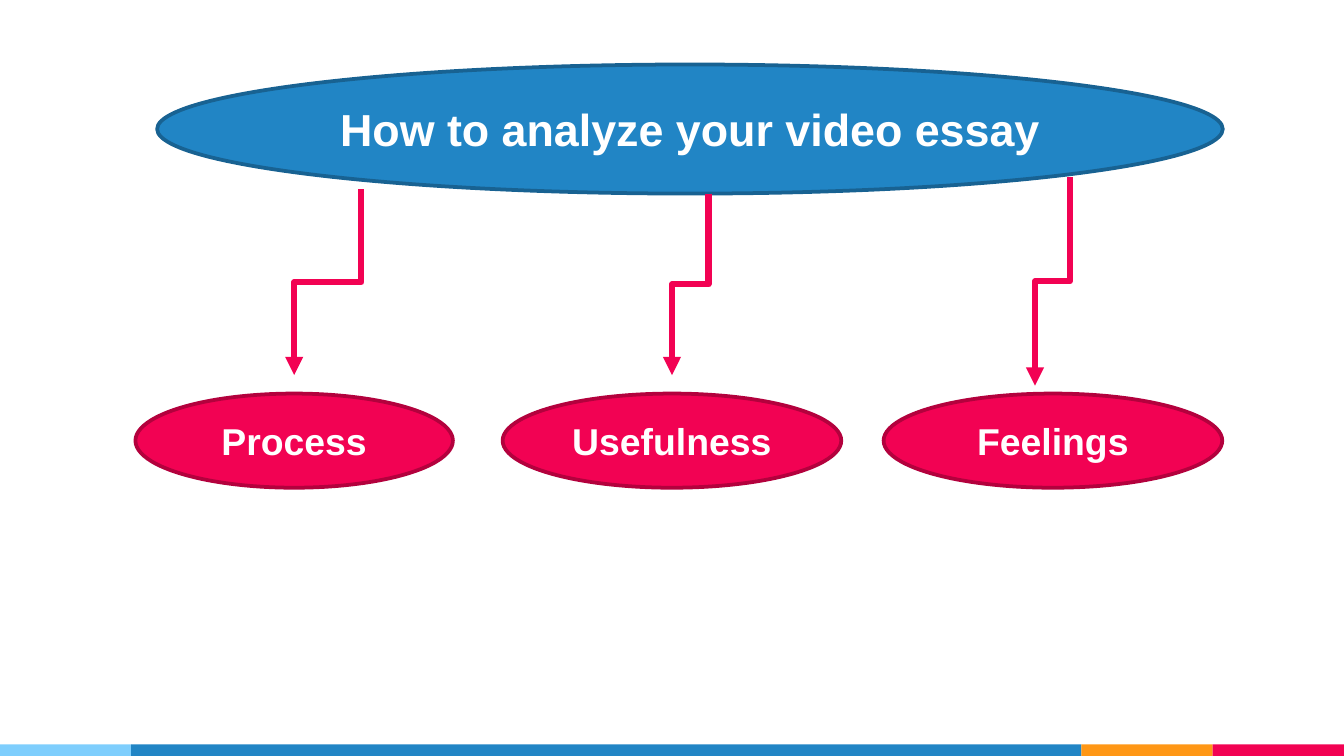
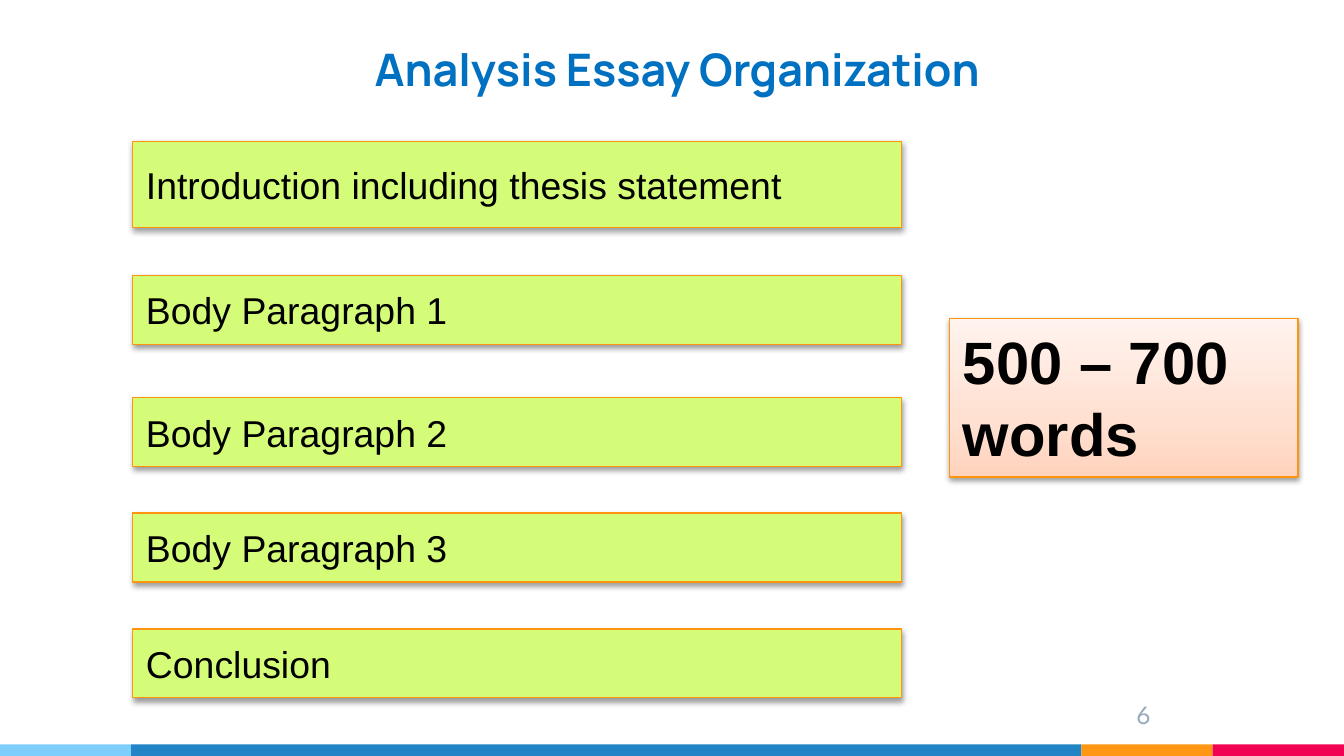
from copy import deepcopy
from dataclasses import dataclass
from itertools import pairwise
from typing import NamedTuple

from lxml.etree import SubElement
from pptx import Presentation
from pptx.dml.color import RGBColor
from pptx.enum.shapes import MSO_CONNECTOR, MSO_SHAPE
from pptx.enum.text import MSO_ANCHOR, PP_ALIGN
from pptx.oxml.ns import qn
from pptx.shapes.autoshape import Shape
from pptx.slide import Slide
from pptx.util import Cm, Pt


@dataclass(frozen=True)
class Theme:
    sky: RGBColor = RGBColor(0x7E, 0xCE, 0xFD)
    blue: RGBColor = RGBColor(0x21, 0x85, 0xC5)
    dark_blue: RGBColor = RGBColor(0x18, 0x62, 0x92)
    title_blue: RGBColor = RGBColor(0x00, 0x70, 0xC0)
    orange: RGBColor = RGBColor(0xFF, 0x97, 0x15)
    border_orange: RGBColor = RGBColor(0xFF, 0x94, 0x0F)
    pink: RGBColor = RGBColor(0xF2, 0x02, 0x53)
    dark_pink: RGBColor = RGBColor(0xB3, 0x01, 0x3D)
    lime: RGBColor = RGBColor(0xD5, 0xFC, 0x79)
    gray: RGBColor = RGBColor(0x97, 0xAB, 0xBC)
    white: RGBColor = RGBColor(0xFF, 0xFF, 0xFF)
    black: RGBColor = RGBColor(0x00, 0x00, 0x00)
    peach_stops: tuple[tuple[float, RGBColor], ...] = (
        (0, RGBColor(0xFF, 0xD3, 0xBD)),
        (0.35, RGBColor(0xFF, 0xE0, 0xD1)),
        (1, RGBColor(0xFF, 0xF3, 0xEE)),
    )
    title_size: int = 24
    body_size: int = 20
    callout_size: int = 32
    number_size: int = 13


THEME = Theme()


class Box(NamedTuple):
    """Left, top, width and height in centimetres."""
    left: float
    top: float
    width: float
    height: float

    def lengths(self) -> tuple[Cm, ...]:
        return tuple(Cm(value) for value in self)


class TextStyle(NamedTuple):
    size: int
    color: RGBColor
    font: str = "Arial"
    bold: bool = False
    align: PP_ALIGN = PP_ALIGN.LEFT
    anchor: MSO_ANCHOR = MSO_ANCHOR.MIDDLE


class Arrow(NamedTuple):
    """Start and end of a downward elbow arrow in centimetres."""
    start_x: float
    start_y: float
    end_x: float
    end_y: float


class Topic(NamedTuple):
    text: str
    box: Box
    arrow: Arrow


class Section(NamedTuple):
    text: str
    top: float
    height: float = 1.3


SLIDE_WIDTH, SLIDE_HEIGHT = 25.4, 14.29
BAND_HEIGHT = 0.22
BAND_EDGES = (0, 2.48, 20.44, 22.92, SLIDE_WIDTH)
BAND_COLORS = (THEME.sky, THEME.blue, THEME.orange, THEME.pink)

HEADING = TextStyle(THEME.title_size, THEME.white, bold=True, align=PP_ALIGN.CENTER)
TOPIC = HEADING._replace(size=THEME.body_size)
TITLE = TextStyle(THEME.title_size, THEME.title_blue, "Manrope", True,
                  anchor=MSO_ANCHOR.BOTTOM)
SECTION = TextStyle(THEME.body_size, THEME.black)
CALLOUT = TextStyle(THEME.callout_size, THEME.black, bold=True, anchor=MSO_ANCHOR.TOP)
NUMBER = TextStyle(THEME.number_size, THEME.gray, "Lato", align=PP_ALIGN.RIGHT,
                   anchor=MSO_ANCHOR.TOP)

TOPICS = (
    Topic("Process", Box(2.56, 7.44, 6, 1.78), Arrow(6.83, 3.58, 5.56, 7.09)),
    Topic("Usefulness", Box(9.5, 7.44, 6.4, 1.78), Arrow(13.39, 3.66, 12.7, 7.09)),
    Topic("Feelings", Box(16.7, 7.44, 6.4, 1.78), Arrow(20.22, 3.35, 19.56, 7.29)),
)
SECTIONS = (
    Section("Introduction including thesis statement", 2.67, 1.63),
    Section("Body Paragraph 1", 5.21),
    Section("Body Paragraph 2", 7.52),
    Section("Body Paragraph 3", 9.7),
    Section("Conclusion", 11.89),
)


def write(shape: Shape, text: str, style: TextStyle) -> None:
    frame = shape.text_frame
    frame.word_wrap = True
    frame.vertical_anchor = style.anchor
    paragraph = frame.paragraphs[0]
    paragraph.alignment = style.align
    run = paragraph.add_run()
    run.text = text
    run.font.name = style.font
    run.font.size = Pt(style.size)
    run.font.bold = style.bold
    run.font.color.rgb = style.color


def add_text(slide: Slide, box: Box, text: str, style: TextStyle) -> None:
    shape = slide.shapes.add_textbox(*box.lengths())
    frame = shape.text_frame
    frame.margin_left = frame.margin_right = Cm(0.25)
    frame.margin_top = frame.margin_bottom = Cm(0.25)
    write(shape, text, style)


def add_filled(slide: Slide, kind: MSO_SHAPE, box: Box, fill: RGBColor,
               line: RGBColor | None = None, line_width: float = 0) -> Shape:
    shape = slide.shapes.add_shape(kind, *box.lengths())
    shape.shadow.inherit = False
    shape.fill.solid()
    shape.fill.fore_color.rgb = fill
    if line is None:
        shape.line.fill.background()
    else:
        shape.line.color.rgb = line
        shape.line.width = Pt(line_width)
    return shape


def add_ellipse(slide: Slide, box: Box, text: str, style: TextStyle,
                fill: RGBColor, line: RGBColor) -> None:
    write(add_filled(slide, MSO_SHAPE.OVAL, box, fill, line, 2), text, style)


def add_card(slide: Slide, box: Box, text: str, style: TextStyle) -> Shape:
    """Add an orange-edged rectangle with a soft shadow below it."""
    card = add_filled(slide, MSO_SHAPE.RECTANGLE, box, THEME.lime,
                      THEME.border_orange, 0.75)
    effects = card._element.spPr.find(qn("a:effectLst"))
    shadow = SubElement(effects, qn("a:outerShdw"), blurRad="40000", dist="20000",
                        dir="5400000", rotWithShape="0")
    color = SubElement(shadow, qn("a:srgbClr"), val=str(THEME.black))
    SubElement(color, qn("a:alpha"), val="38000")
    write(card, text, style)
    return card


def fill_peach(shape: Shape) -> None:
    shape.fill.gradient()
    shape.fill.gradient_angle = 90
    stop_list = shape._element.spPr.find(".//" + qn("a:gsLst"))
    stop_list.append(deepcopy(stop_list[0]))
    for stop, (position, color) in zip(shape.fill.gradient_stops, THEME.peach_stops):
        stop.position = position
        stop.color.rgb = color


def add_elbow_arrow(slide: Slide, arrow: Arrow) -> None:
    """Add an elbow turned by 90 degrees, so that it starts and ends vertically."""
    center_x = (arrow.start_x + arrow.end_x) / 2
    center_y = (arrow.start_y + arrow.end_y) / 2
    half_drop = (arrow.end_y - arrow.start_y) / 2
    half_shift = (arrow.start_x - arrow.end_x) / 2
    connector = slide.shapes.add_connector(
        MSO_CONNECTOR.ELBOW,
        Cm(center_x - half_drop), Cm(center_y - half_shift),
        Cm(center_x + half_drop), Cm(center_y + half_shift))
    connector.line.color.rgb = THEME.pink
    connector.line.width = Pt(3.25)
    properties = connector._element.spPr
    properties.find(qn("a:xfrm")).set("rot", "5400000")
    SubElement(properties.find(qn("a:ln")), qn("a:tailEnd"), type="triangle")
    SubElement(properties, qn("a:effectLst"))


def add_banded_slide(presentation: Presentation) -> Slide:
    slide = presentation.slides.add_slide(presentation.slide_layouts[6])
    for (left, right), color in zip(pairwise(BAND_EDGES), BAND_COLORS):
        band = Box(left, SLIDE_HEIGHT - BAND_HEIGHT, right - left, BAND_HEIGHT)
        add_filled(slide, MSO_SHAPE.RECTANGLE, band, color)
    return slide


def build_analysis_slide(presentation: Presentation) -> None:
    slide = add_banded_slide(presentation)
    add_ellipse(slide, Box(2.97, 1.22, 20.14, 2.44), "How to analyze your video essay",
                HEADING, THEME.blue, THEME.dark_blue)
    for topic in TOPICS:
        add_elbow_arrow(slide, topic.arrow)
        add_ellipse(slide, topic.box, topic.text, TOPIC, THEME.pink, THEME.dark_pink)


def build_organization_slide(presentation: Presentation) -> None:
    slide = add_banded_slide(presentation)
    add_text(slide, Box(6.83, 0.76, 14.53, 1.3), "Analysis Essay Organization", TITLE)
    add_text(slide, Box(20.47, 12.98, 1.52, 0.86), "6", NUMBER)
    for section in SECTIONS:
        add_card(slide, Box(2.51, section.top, 14.53, section.height),
                 section.text, SECTION)
    word_count = add_card(slide, Box(17.95, 6.02, 6.58, 3), "500 – 700 words", CALLOUT)
    fill_peach(word_count)


def main() -> None:
    presentation = Presentation()
    presentation.slide_width = Cm(SLIDE_WIDTH)
    presentation.slide_height = Cm(SLIDE_HEIGHT)
    build_analysis_slide(presentation)
    build_organization_slide(presentation)
    presentation.save("out.pptx")


if __name__ == "__main__":
    main()
